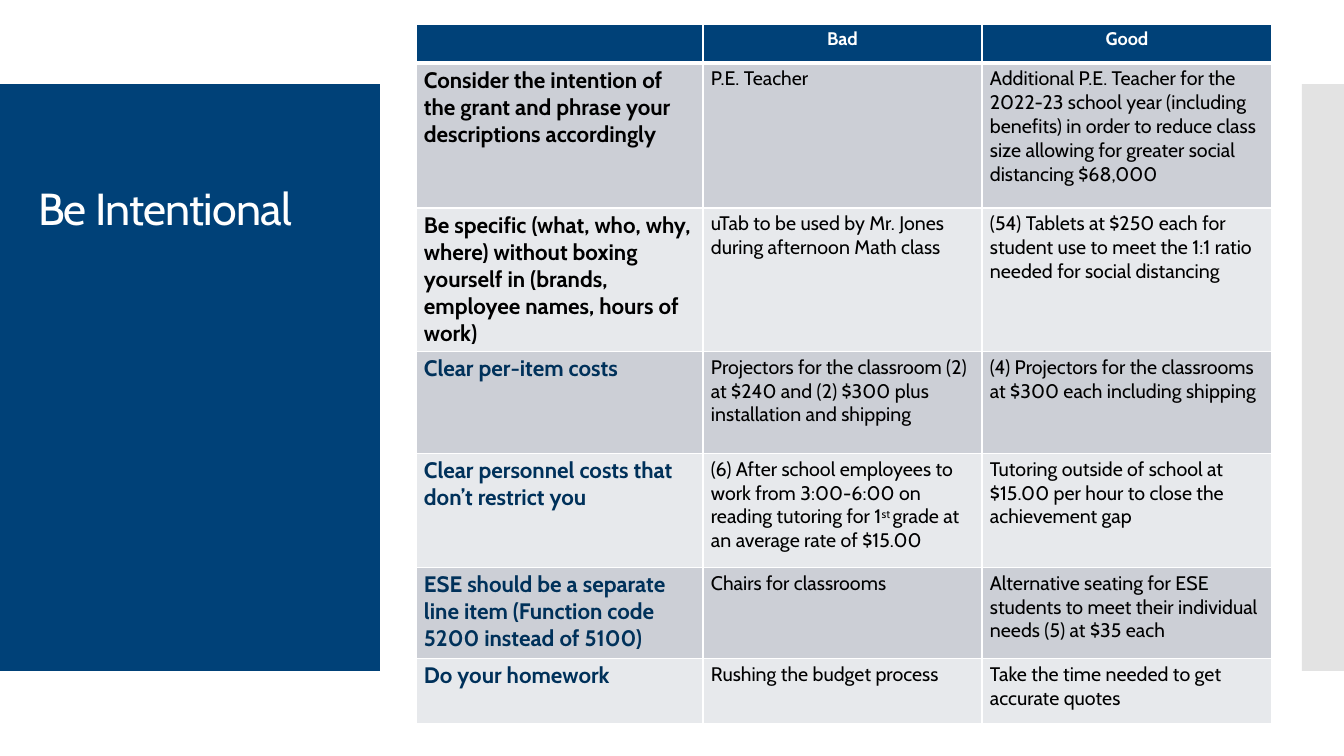
from lxml.etree import SubElement
from pptx import Presentation
from pptx.dml.color import RGBColor
from pptx.enum.shapes import MSO_SHAPE
from pptx.enum.text import MSO_ANCHOR, MSO_AUTO_SIZE, PP_ALIGN
from pptx.oxml.ns import qn
from pptx.util import Emu, Pt

PX_PER_INCH = 100.8
NAVY = RGBColor(0x00, 0x41, 0x78)
DEEP_NAVY = RGBColor(0x00, 0x31, 0x5A)
SILVER = RGBColor(0xC8, 0xC8, 0xC8)
DARK_BAND = RGBColor(0xCC, 0xCF, 0xD6)
LIGHT_BAND = RGBColor(0xE7, 0xE9, 0xEC)
BLACK = RGBColor(0, 0, 0)
WHITE = RGBColor(0xFF, 0xFF, 0xFF)

COLUMN_WIDTHS = (287, 279, 290)
ROW_HEIGHTS = (39, 145, 143, 102, 114, 91, 65)

# Text between carets is superscript
ROWS = (
    ("", "Bad", "Good"),
    ("Consider the intention of the grant and phrase your descriptions accordingly",
     "P.E. Teacher",
     "Additional P.E. Teacher for the 2022-23 school year (including benefits) in order "
     "to reduce class size allowing for greater social distancing $68,000"),
    ("Be specific (what, who, why, where) without boxing yourself in "
     "(brands, employee names, hours of work)",
     "uTab to be used by Mr. Jones during afternoon Math class",
     "(54) Tablets at $250 each for student use to meet the 1:1 ratio "
     "needed for social distancing"),
    ("Clear per-item costs",
     "Projectors for the classroom (2) at $240 and (2) $300 plus installation and shipping",
     "(4) Projectors for the classrooms at $300 each including shipping"),
    ("Clear personnel costs that don’t restrict you",
     "(6) After school employees to work from 3:00-6:00 on reading tutoring for "
     "1^st ^grade at an average rate of $15.00",
     "Tutoring outside of school at $15.00 per hour to close the achievement gap"),
    ("ESE should be a separate line item (Function code 5200 instead of 5100)",
     "Chairs for classrooms",
     "Alternative seating for ESE students to meet their individual needs (5) at $35 each"),
    ("Do your homework",
     "Rushing the budget process",
     "Take the time needed to get accurate quotes"),
)


def px(length):
    return Emu(round(length * 914400 / PX_PER_INCH))


class SlideBuilder:
    font_name = "Cabin"

    def __init__(self, slide):
        self.slide = slide

    def format_span(self, span, size, color, bold=False):
        span.font.name = self.font_name
        span.font.size = Pt(size)
        span.font.color.rgb = color
        span.font.bold = bold

    def panel(self, left, top, width, height, color, opacity=100):
        box = self.slide.shapes.add_shape(
            MSO_SHAPE.RECTANGLE, px(left), px(top), px(width), px(height))
        box.shadow.inherit = False
        box.line.fill.background()
        box.fill.solid()
        box.fill.fore_color.rgb = color
        if opacity < 100:
            color_node = box.element.spPr.find(qn("a:solidFill"))[0]
            SubElement(color_node, qn("a:alpha"), val=str(opacity * 1000))

    def title(self, text, left, top, width, height):
        box = self.slide.shapes.title
        box.left, box.top, box.width, box.height = map(px, (left, top, width, height))
        frame = box.text_frame
        frame.text = text
        frame.word_wrap = True
        frame.auto_size = MSO_AUTO_SIZE.NONE
        frame.vertical_anchor = MSO_ANCHOR.BOTTOM
        para = frame.paragraphs[0]
        para.alignment = PP_ALIGN.LEFT
        para.line_spacing = 0.9
        span = para.runs[0]
        self.format_span(span, 32, WHITE)
        span.font._element.set("spc", "-60")
        # Bring the title in front of the panels
        box.element.getparent().append(box.element)

    def cell_borders(self, cell, bottom_width):
        properties = cell._tc.get_or_add_tcPr()
        widths = {"a:lnL": 1, "a:lnR": 1, "a:lnT": 1, "a:lnB": bottom_width}
        for position, (side, width) in enumerate(widths.items()):
            line = SubElement(properties, qn(side), w=str(Pt(width)))
            fill = SubElement(line, qn("a:solidFill"))
            SubElement(fill, qn("a:srgbClr"), val=str(WHITE))
            properties.insert(position, line)

    def cell(self, cell, text, fill, size, color, bold, alignment, bottom_width=1):
        cell.fill.solid()
        cell.fill.fore_color.rgb = fill
        cell.margin_left = cell.margin_right = px(8)
        cell.margin_top = cell.margin_bottom = px(4)
        self.cell_borders(cell, bottom_width)
        para = cell.text_frame.paragraphs[0]
        para.alignment = alignment
        for number, part in enumerate(text.split("^")):
            span = para.add_run()
            span.text = part
            self.format_span(span, size, color, bold)
            if number % 2:
                span.font._element.set("baseline", "30000")

    def table(self, left, top, rows, widths, heights):
        table = self.slide.shapes.add_table(
            len(rows), len(widths), px(left), px(top),
            px(sum(widths)), px(sum(heights))).table
        for column, width in zip(table.columns, widths):
            column.width = px(width)
        for row, height in zip(table.rows, heights):
            row.height = px(height)
        for r, texts in enumerate(rows):
            band = DARK_BAND if r % 2 else LIGHT_BAND
            for c, text in enumerate(texts):
                cell = table.cell(r, c)
                if r == 0:
                    self.cell(cell, text, NAVY, 13, WHITE, True, PP_ALIGN.CENTER, 3)
                elif c == 0:
                    color = BLACK if r < 3 else DEEP_NAVY
                    self.cell(cell, text, band, 16, color, True, PP_ALIGN.LEFT)
                else:
                    self.cell(cell, text, band, 14, BLACK, False, PP_ALIGN.LEFT)


def main():
    deck = Presentation()
    deck.slide_width, deck.slide_height = px(1344), px(756)
    page = SlideBuilder(deck.slides.add_slide(deck.slide_layouts[5]))

    # Side panels
    page.panel(0, 84, 380, 587, NAVY)
    page.panel(1302, 84, 42, 587, SILVER, opacity=50)

    # Title and comparison table
    page.title("Be Intentional", 28, 124, 325, 116)
    page.table(416, 24, ROWS, COLUMN_WIDTHS, ROW_HEIGHTS)

    deck.save("out.pptx")


if __name__ == "__main__":
    main()
